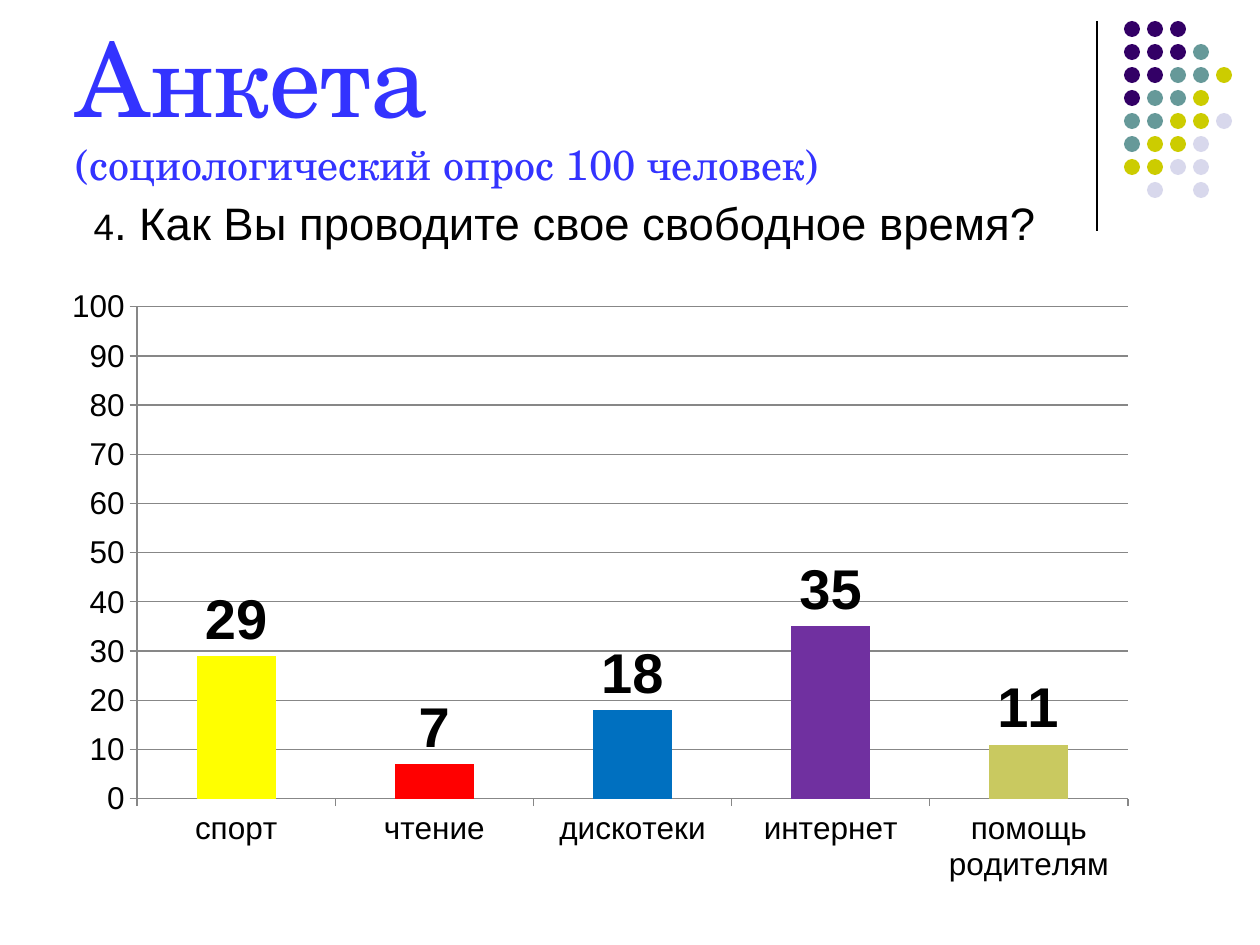
from lxml import etree
from pptx import Presentation
from pptx.chart.data import CategoryChartData
from pptx.dml.color import RGBColor
from pptx.enum.chart import XL_CHART_TYPE, XL_LABEL_POSITION, XL_TICK_MARK
from pptx.enum.shapes import MSO_CONNECTOR, MSO_SHAPE
from pptx.enum.text import MSO_ANCHOR, MSO_AUTO_SIZE, PP_ALIGN
from pptx.oxml import parse_xml
from pptx.oxml.ns import nsdecls, qn
from pptx.util import Emu, Pt

COLUMNS = XL_CHART_TYPE.COLUMN_CLUSTERED
OUTSIDE_END = XL_LABEL_POSITION.OUTSIDE_END
TICK_OUTSIDE = XL_TICK_MARK.OUTSIDE
STRAIGHT = MSO_CONNECTOR.STRAIGHT
OVAL = MSO_SHAPE.OVAL
BOTTOM = MSO_ANCHOR.BOTTOM
NO_AUTOFIT = MSO_AUTO_SIZE.NONE
LEFT = PP_ALIGN.LEFT

BLACK = RGBColor(0x00, 0x00, 0x00)
GRAY = RGBColor(0x87, 0x87, 0x87)
BLUE = RGBColor(0x33, 0x33, 0xFF)
PURPLE = RGBColor(0x33, 0x00, 0x66)
TEAL = RGBColor(0x66, 0x99, 0x99)
OLIVE = RGBColor(0xCC, 0xCC, 0x00)
LAVENDER = RGBColor(0xD8, 0xD8, 0xEC)
YELLOW = RGBColor(0xFF, 0xFF, 0x00)
RED = RGBColor(0xFF, 0x00, 0x00)
AZURE = RGBColor(0x00, 0x70, 0xC0)
VIOLET = RGBColor(0x70, 0x30, 0xA0)
KHAKI = RGBColor(0xC9, 0xC9, 0x60)


def px(*lengths):
    return [Emu(round(length * 914400 / 126)) for length in lengths]


def style_runs(paragraph, sizes, font_name, color):
    for run, size in zip(paragraph.runs, sizes):
        run.font.size = Pt(size)
        run.font.name = font_name
        run.font.color.rgb = color


prs = Presentation()
prs.slide_width, prs.slide_height = px(1260, 945)
slide = prs.slides.add_slide(prs.slide_layouts[1])

divider = slide.shapes.add_connector(STRAIGHT, *px(1097, 21, 1097, 231))
divider.line.color.rgb = BLACK
divider.line.width = Pt(0.75)
etree.SubElement(divider._element.spPr, qn("a:effectLst"))

dot_colors = {"P": PURPLE, "T": TEAL, "O": OLIVE, "L": LAVENDER}
dot_rows = ["PPP", "PPPT", "PPTTO", "PTTO", "TTOOL", "TOOL", "OOLL", " L L"]
for row, dots in enumerate(dot_rows):
    for column, letter in enumerate(dots):
        if letter in dot_colors:
            dot = slide.shapes.add_shape(OVAL, *px(1124 + 23 * column, 21 + 23 * row, 16, 16))
            dot.fill.solid()
            dot.fill.fore_color.rgb = dot_colors[letter]
            dot.line.fill.background()
            dot.shadow.inherit = False

heading = slide.shapes.title
heading.left, heading.top, heading.width, heading.height = px(63, 16, 1040, 179)
heading.text_frame.text = "Анкета\v(социологический опрос 100 человек)"
heading.text_frame.auto_size = NO_AUTOFIT
heading.text_frame.vertical_anchor = BOTTOM
heading_line = heading.text_frame.paragraphs[0]
heading_line.alignment = LEFT
style_runs(heading_line, [59, 24], "TeX Gyre Schola", BLUE)

question = slide.placeholders[1]
question.left, question.top, question.width, question.height = px(0, 195, 1260, 69)
question.text_frame.auto_size = NO_AUTOFIT
question_line = question.text_frame.paragraphs[0]
for part in ("4", ". Как Вы проводите свое свободное время?"):
    question_line.add_run().text = part
question_line.alignment = LEFT
question_line.line_spacing = 0.9
question_line.space_before = Pt(5)
style_runs(question_line, [21, 26], "Arial", BLACK)
question_format = question_line._p.get_or_add_pPr()
question_format.set("marL", str(px(81)[0]))
question_format.set("indent", "0")
etree.SubElement(question_format, qn("a:buNone"))

answers = [
    ("спорт", 29, YELLOW),
    ("чтение", 7, RED),
    ("дискотеки", 18, AZURE),
    ("интернет", 35, VIOLET),
    ("помощь родителям", 11, KHAKI),
]
survey = CategoryChartData()
survey.categories = [name for name, _, _ in answers]
survey.add_series("Series 1", [value for _, value, _ in answers])
chart = slide.shapes.add_chart(COLUMNS, *px(49, 276, 1101, 615), survey).chart
chart.has_legend = False
chart.has_title = False
chart.font.size = Pt(18)
chart.font.name = "Arial"
chart.font.color.rgb = BLACK

for axis in (chart.category_axis, chart.value_axis):
    axis.major_tick_mark = TICK_OUTSIDE
    axis.format.line.color.rgb = GRAY
chart.value_axis.minimum_scale = 0
chart.value_axis.maximum_scale = 100
chart.value_axis.major_unit = 10
chart.value_axis.major_gridlines.format.line.color.rgb = GRAY

plot = chart.plots[0]
plot.gap_width = 150
plot.vary_by_categories = False
bars = plot.series[0]
bars.format.fill.solid()
bars.format.fill.fore_color.rgb = YELLOW
for index, (_, _, color) in enumerate(answers):
    fill = bars.points[index].format.fill
    fill.solid()
    fill.fore_color.rgb = color
labels = bars.data_labels
labels.show_value = True
labels.position = OUTSIDE_END
labels.font.size = Pt(32)
labels.font.bold = True
labels.font.name = "Arial"
labels.font.color.rgb = BLACK

plot_area = chart._chartSpace.find(".//" + qn("c:plotArea"))
for old_layout in plot_area.findall(qn("c:layout")):
    plot_area.remove(old_layout)
plot_area.insert(0, parse_xml(
    f'<c:layout {nsdecls("c")}><c:manualLayout><c:layoutTarget val="inner"/>'
    '<c:xMode val="edge"/><c:yMode val="edge"/>'
    '<c:x val="0.08"/><c:y val="0.05"/><c:w val="0.9"/><c:h val="0.8"/>'
    '</c:manualLayout></c:layout>'
))

prs.save("out.pptx")
